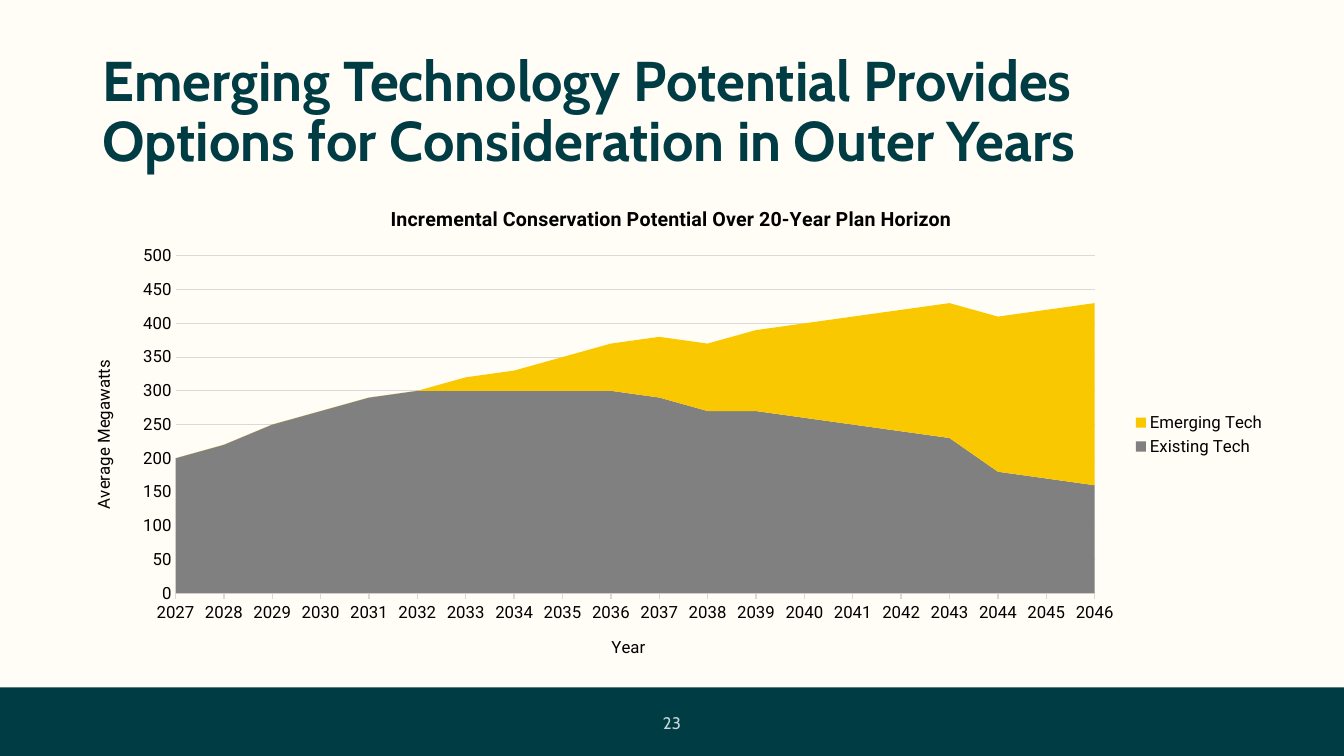
from dataclasses import dataclass

from lxml import etree
from pptx import Presentation
from pptx.chart.data import CategoryChartData
from pptx.dml.color import RGBColor
from pptx.enum.chart import XL_CHART_TYPE, XL_LEGEND_POSITION, XL_TICK_MARK
from pptx.enum.shapes import MSO_SHAPE
from pptx.enum.text import MSO_ANCHOR, PP_ALIGN
from pptx.oxml.ns import qn
from pptx.util import Cm, Pt

AREA = XL_CHART_TYPE.AREA_STACKED
RIGHT = XL_LEGEND_POSITION.RIGHT
TICK_OUT, TICK_NONE = XL_TICK_MARK.OUTSIDE, XL_TICK_MARK.NONE
RECT = MSO_SHAPE.RECTANGLE
MIDDLE = MSO_ANCHOR.MIDDLE
LEFT, CENTER = PP_ALIGN.LEFT, PP_ALIGN.CENTER


@dataclass(frozen=True)
class Theme:
    paper: str = "FFFDF5"
    teal: str = "003C44"
    pale: str = "F9FBFD"
    ink: str = "000000"
    grid: str = "D9D9D9"
    gray: str = "808080"
    gold: str = "FAC800"
    head: str = "Cabin"
    body: str = "Roboto"
    large: int = 40
    medium: int = 14
    small: int = 12


THEME = Theme()


@dataclass(frozen=True)
class Label:
    text: str
    box: tuple[float, float, float, float]
    pads: tuple[float, float, float, float]
    size: int
    color: str
    bold: bool = False
    align: PP_ALIGN = LEFT
    space: float = 1.0
    alpha: int = 100


@dataclass(frozen=True)
class Band:
    name: str
    color: str
    values: tuple[int, ...]


LABELS = (
    Label("23", (16.05, 17.68, 1.52, 1.09), (0.25, 0.25, 0, 0.25),
          THEME.small, THEME.pale, align=CENTER, alpha=80),
    Label("Emerging Technology Potential Provides Options for "
          "Consideration in Outer Years",
          (2.34, 1.02, 29.21, 3.68), (0.25, 0.13, 0.25, 0.13),
          THEME.large, THEME.teal, bold=True, space=0.9),
)
YEARS = [str(year) for year in range(2027, 2047)]
BANDS = (
    Band("Existing Tech", THEME.gray,
         (200, 220, 250, 270, 290, 300, 300, 300, 300, 300,
          290, 270, 270, 260, 250, 240, 230, 180, 170, 160)),
    Band("Emerging Tech", THEME.gold,
         (0, 0, 0, 0, 0, 0, 20, 30, 50, 70,
          90, 100, 120, 140, 160, 180, 200, 230, 250, 270)),
)
CHART_BOX = (1.68, 4.7, 30.48, 12.5)
PLOT = {"x": 0.09, "y": 0.14, "w": 0.76, "h": 0.68}


def rgb(code: str) -> RGBColor:
    return RGBColor.from_string(code)


def style(font, name: str, size: int, color: str, bold: bool) -> None:
    font.name, font.size, font.bold = name, Pt(size), bold
    font.color.rgb = rgb(color)


def add_label(slide, item: Label) -> None:
    frame = slide.shapes.add_textbox(*map(Cm, item.box)).text_frame
    frame.word_wrap = True
    frame.vertical_anchor = MIDDLE
    (frame.margin_left, frame.margin_top,
     frame.margin_right, frame.margin_bottom) = map(Cm, item.pads)
    para = frame.paragraphs[0]
    para.text = item.text
    para.alignment, para.line_spacing = item.align, item.space
    style(para.font, THEME.head, item.size, item.color, item.bold)
    if item.alpha < 100:
        for tint in para._p.iter(qn("a:srgbClr")):
            etree.SubElement(tint, qn("a:alpha"), val=str(item.alpha * 1000))


def add_title(owner, text: str, size: int, bold: bool) -> None:
    """Give a chart or an axis its title."""
    owner.has_title = True
    para = (owner.chart_title if hasattr(owner, "chart_title")
            else owner.axis_title).text_frame.paragraphs[0]
    para.text = text
    style(para.font, THEME.body, size, THEME.ink, bold)


def fix_plot(chart) -> None:
    """Pin the inner plot area to fractions of the chart."""
    area = chart._chartSpace.chart.plotArea
    for old in area.findall(qn("c:layout")):
        area.remove(old)
    layout = etree.Element(qn("c:layout"))
    area.insert(0, layout)
    manual = etree.SubElement(layout, qn("c:manualLayout"))
    marks = {"layoutTarget": "inner", "xMode": "edge", "yMode": "edge", **PLOT}
    for tag, value in marks.items():
        etree.SubElement(manual, qn(f"c:{tag}"), val=str(value))
    for cross in area.iter(qn("c:crossBetween")):
        cross.set("val", "midCat")


def add_areas(slide) -> None:
    data = CategoryChartData()
    data.categories = YEARS
    for band in BANDS:
        data.add_series(band.name, band.values)
    chart = slide.shapes.add_chart(AREA, *map(Cm, CHART_BOX), data).chart
    style(chart.font, THEME.body, THEME.small, THEME.ink, False)
    add_title(chart, "Incremental Conservation Potential Over 20-Year Plan Horizon",
              THEME.medium, True)

    # Series and legend
    plot = chart.plots[0]
    plot.vary_by_categories = False
    for series, band in zip(plot.series, BANDS):
        series.format.fill.solid()
        series.format.fill.fore_color.rgb = rgb(band.color)
        series.format.line.fill.background()
    chart.has_legend = True
    chart.legend.position = RIGHT
    chart.legend.include_in_layout = False

    # Axes
    years, power = chart.category_axis, chart.value_axis
    add_title(years, "Year", THEME.small, False)
    add_title(power, "Average Megawatts", THEME.small, False)
    years.major_tick_mark, power.major_tick_mark = TICK_OUT, TICK_NONE
    years.has_major_gridlines, power.has_major_gridlines = False, True
    power.minimum_scale, power.maximum_scale, power.major_unit = 0, 500, 50
    power.format.line.fill.background()
    for part, width in ((years, 1), (power.major_gridlines, 0.75)):
        part.format.line.color.rgb = rgb(THEME.grid)
        part.format.line.width = Pt(width)
    fix_plot(chart)


def main() -> None:
    deck = Presentation()
    deck.slide_width, deck.slide_height = Cm(33.87), Cm(19.05)
    slide = deck.slides.add_slide(deck.slide_layouts[6])
    slide.background.fill.solid()
    slide.background.fill.fore_color.rgb = rgb(THEME.paper)

    # Footer bar
    bar = slide.shapes.add_shape(RECT, 0, Cm(17.32), Cm(33.87), Cm(1.73))
    bar.shadow.inherit = False
    bar.fill.solid()
    bar.fill.fore_color.rgb = rgb(THEME.teal)
    bar.line.fill.background()

    # Page number and title
    for item in LABELS:
        add_label(slide, item)

    # Chart
    add_areas(slide)
    deck.save("out.pptx")


if __name__ == "__main__":
    main()
